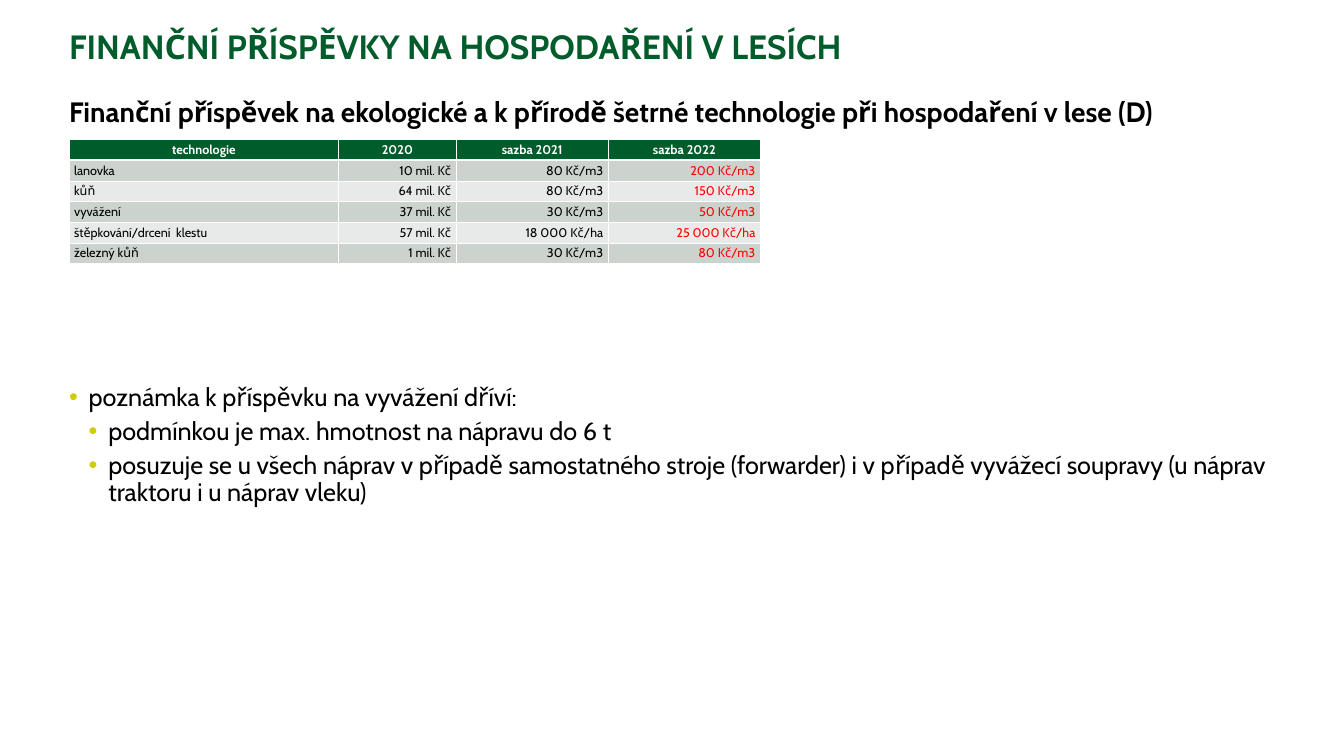
import pptx
import pptx.dml.color
import pptx.enum.text
import pptx.oxml.ns
import pptx.util
from lxml import etree

EMU_PER_PX = 9144  # 100 px to the inch
FONT = "Cabin"
COLORS = {
    "green": "005C2B",
    "lime": "CDCE00",
    "black": "000000",
    "white": "FFFFFF",
    "red": "FF0000",
    "dark_band": "CCD2CD",
    "light_band": "E7EAE8",
}
ALIGN = pptx.enum.text.PP_ALIGN
BULLET_INDENT = 39

TITLE = "FINANČNÍ PŘÍSPĚVKY NA HOSPODAŘENÍ V LESÍCH"
SUBTITLE = ("Finanční příspěvek na ekologické a k přírodě šetrné technologie "
            "při hospodaření v lese (D)")
RATES = [
    ["technologie", "2020", "sazba 2021", "sazba 2022"],
    ["lanovka", "10 mil. Kč", "80 Kč/m3", "200 Kč/m3"],
    ["kůň", "64 mil. Kč", "80 Kč/m3", "150 Kč/m3"],
    ["vyvážení", "37 mil. Kč", "30 Kč/m3", "50 Kč/m3"],
    ["štěpkování/drcení  klestu", "57 mil. Kč", "18 000 Kč/ha", "25 000 Kč/ha"],
    ["železný kůň", "1 mil. Kč", "30 Kč/m3", "80 Kč/m3"],
]
NOTES = [
    (0, "poznámka k příspěvku na vyvážení dříví:"),
    (1, "podmínkou je max. hmotnost na nápravu do 6 t"),
    (1, "posuzuje se u všech náprav v případě samostatného stroje (forwarder) "
        "i v případě vyvážecí soupravy (u náprav traktoru i u náprav vleku)"),
]


def px(length):
    return pptx.util.Emu(length * EMU_PER_PX)


def rgb(name):
    return pptx.dml.color.RGBColor.from_string(COLORS[name])


def add_element(parent, tag, **attributes):
    return etree.SubElement(parent, pptx.oxml.ns.qn(tag), attributes)


def format_runs(para, size, color, bold=False):
    for span in para.runs:
        span.font.name = FONT
        span.font.size = pptx.util.Pt(size)
        span.font.bold = bold
        span.font.color.rgb = rgb(color)


def add_text_frame(page, box):
    frame = page.shapes.add_textbox(*map(px, box)).text_frame
    frame.word_wrap = True
    frame.margin_left = frame.margin_right = 0
    frame.margin_top = frame.margin_bottom = 0
    return frame


def add_heading(page, box, text, size, color):
    para = add_text_frame(page, box).paragraphs[0]
    para.text = text
    para.line_spacing = 0.9
    format_runs(para, size, color, bold=True)


def add_bullet(para, level):
    properties = para._p.get_or_add_pPr()
    properties.set("marL", str(px(BULLET_INDENT * (level + 1))))
    properties.set("indent", str(px(-BULLET_INDENT)))
    bullet_color = add_element(properties, "a:buClr")
    add_element(bullet_color, "a:srgbClr", val=COLORS["lime"])
    add_element(properties, "a:buFont", typeface="Arial")
    add_element(properties, "a:buChar", char="•")


def add_notes(page, box):
    frame = add_text_frame(page, box)
    for index, (level, text) in enumerate(NOTES):
        para = frame.add_paragraph() if index else frame.paragraphs[0]
        para.text = text
        para.level = level
        add_bullet(para, level)
        para.line_spacing = 0.9
        if index:
            para.space_before = pptx.util.Pt(10)
        format_runs(para, 36, "black")


def set_borders(cell, bottom_width):
    properties = cell._tc.get_or_add_tcPr()
    for side, width in zip("LRTB", (1, 1, 1, bottom_width)):
        line = add_element(properties, f"a:ln{side}", w=str(pptx.util.Pt(width)))
        fill = add_element(line, "a:solidFill")
        add_element(fill, "a:srgbClr", val=COLORS["white"])


def style_cell(cell, row, column):
    header = row == 0
    if header:
        fill, color, align = "green", "white", ALIGN.CENTER
    else:
        fill = "dark_band" if row % 2 else "light_band"
        color = "red" if column == 3 else "black"
        align = ALIGN.RIGHT if column else ALIGN.LEFT
    set_borders(cell, 3 if header else 1)
    cell.fill.solid()
    cell.fill.fore_color.rgb = rgb(fill)
    cell.vertical_anchor = pptx.enum.text.MSO_ANCHOR.MIDDLE
    para = cell.text_frame.paragraphs[0]
    para.alignment = align
    format_runs(para, 18, color, bold=header)


def add_rates_table(page, box, column_widths):
    shape = page.shapes.add_table(len(RATES), len(column_widths), *map(px, box))
    table = shape.table
    for column, width in zip(table.columns, column_widths):
        column.width = px(width)
    for row, values in enumerate(RATES):
        table.rows[row].height = px(box[3] // len(RATES))
        for column, value in enumerate(values):
            cell = table.cell(row, column)
            cell.text_frame.text = value
            style_cell(cell, row, column)


def main():
    deck = pptx.Presentation()
    deck.slide_width, deck.slide_height = px(2667), px(1500)
    page = deck.slides.add_slide(deck.slide_layouts[6])
    left, width = 137, 2394

    # Title and subtitle
    add_heading(page, (left, 61, width, 134), TITLE, 48, "green")
    add_heading(page, (left, 195, width, 70), SUBTITLE, 40, "black")

    # Rates by technology
    add_rates_table(page, (left, 277, 1372, 246), (535, 233, 302, 302))

    # Notes on the timber forwarding contribution
    add_notes(page, (left, 763, width, 647))

    deck.save("out.pptx")


if __name__ == "__main__":
    main()
